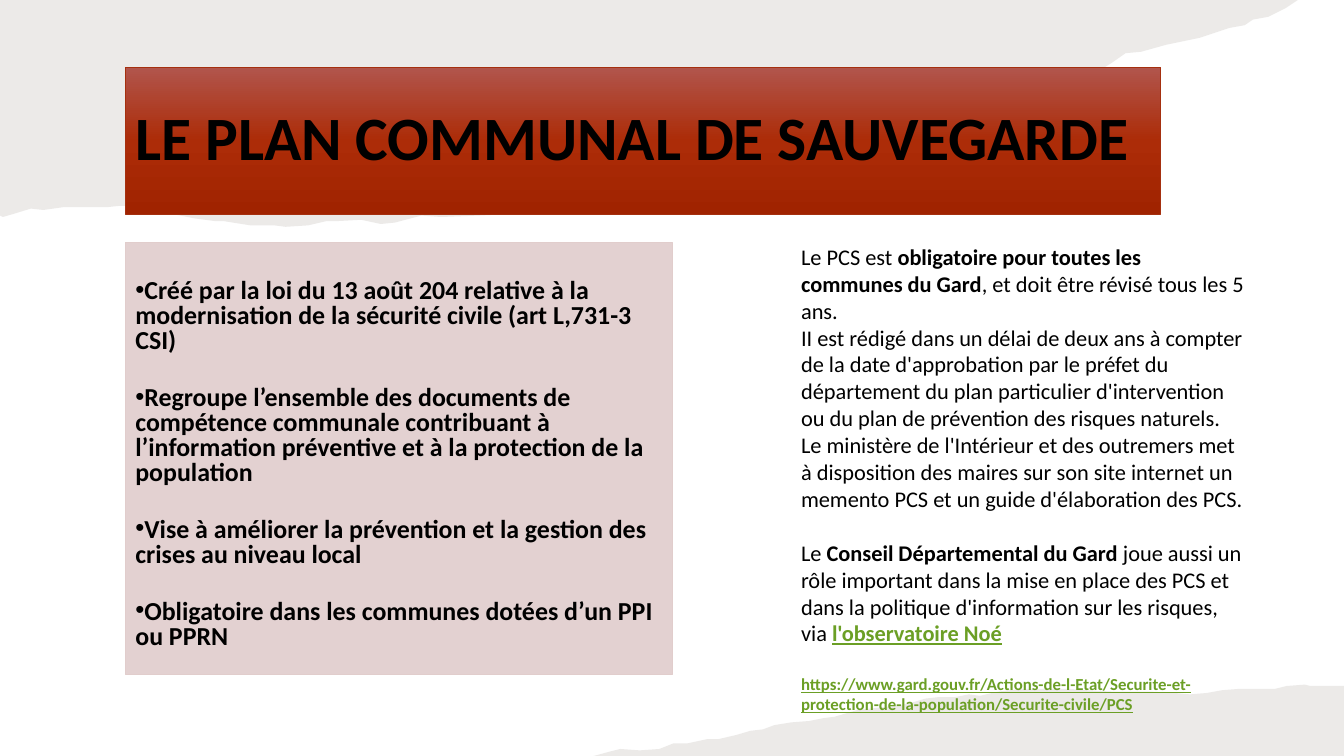
from copy import deepcopy
from dataclasses import dataclass

from lxml import etree
from pptx import Presentation
from pptx.dml.color import RGBColor
from pptx.enum import text as txt
from pptx.oxml.ns import qn
from pptx.util import Pt


@dataclass(frozen=True)
class Theme:
    font: str = "Calibri"
    ink: str = "000000"
    link: str = "6B9F25"
    paper: str = "82766A"
    panel: str = "E1CDCC"
    edge: str = "A5300F"
    band: tuple = ((0, "B1554C"), (0.5, "AC2C08"), (1, "A02300"))
    head: float = 44
    list: float = 18.5
    body: float = 16
    note: float = 12


class Deck:
    def __init__(self, theme):
        self.theme = theme
        self.prs = Presentation()
        self.prs.slide_width, self.prs.slide_height = Pt(960), Pt(540)
        self.slide = self.prs.slides.add_slide(self.prs.slide_layouts[3])

    def fade(self, shape, color, share):
        """Fill with a colour at the given opacity in percent."""
        shape.fill.solid()
        shape.fill.fore_color.rgb = RGBColor.from_string(color)
        tint = shape._element.spPr.find(qn("a:solidFill"))[0]
        etree.SubElement(tint, qn("a:alpha")).set("val", str(share * 1000))

    def edge(self, shape, color):
        shape.line.color.rgb = RGBColor.from_string(color)
        shape.line.width = Pt(0.5)

    def torn(self, points):
        """Draw a torn sheet of paper behind all the text."""
        pen = self.slide.shapes.build_freeform(*points[0], scale=Pt(1))
        pen.add_line_segments(points[1:], close=True)
        sheet = pen.convert_to_shape()
        sheet.shadow.inherit = False
        sheet.line.fill.background()
        self.fade(sheet, self.theme.paper, 15)
        self.slide.shapes._spTree.insert(2, sheet._element)

    def hold(self, idx, left, top, width, height):
        """Place a template placeholder."""
        box = self.slide.placeholders[idx]
        box.left, box.top = Pt(left), Pt(top)
        box.width, box.height = Pt(width), Pt(height)
        frame = box.text_frame
        frame.word_wrap = True
        frame.auto_size = txt.MSO_AUTO_SIZE.NONE
        return box

    def style(self, run, size, bold=False, link=False):
        font = run.font
        font.name, font.size, font.bold = self.theme.font, Pt(size), bold
        font.color.rgb = RGBColor.from_string(self.theme.link if link else self.theme.ink)
        if link:
            font.underline = True

    def space(self, para, line, before=0, after=0):
        para.alignment = txt.PP_ALIGN.LEFT
        para.line_spacing = line
        para.space_before, para.space_after = Pt(before), Pt(after)

    def mark(self, para, char=None):
        """Set the bullet flush with the text, or none."""
        props = para._p.get_or_add_pPr()
        props.set("marL", "0")
        props.set("indent", "0")
        if char:
            etree.SubElement(props, qn("a:buChar")).set("char", char)
        else:
            etree.SubElement(props, qn("a:buNone"))

    def title(self, words, *area):
        box = self.hold(0, *area)
        box.fill.gradient()
        box.fill.gradient_angle = 270
        stops = box._element.spPr.find(".//" + qn("a:gsLst"))
        stops.append(deepcopy(stops[-1]))
        for stop, (place, color) in zip(box.fill.gradient_stops, self.theme.band):
            stop.position = place
            stop.color.rgb = RGBColor.from_string(color)
        self.edge(box, self.theme.edge)
        box.text_frame.text = words
        box.text_frame.vertical_anchor = txt.MSO_ANCHOR.MIDDLE
        para = box.text_frame.paragraphs[0]
        self.space(para, 0.9)
        self.style(para.runs[0], self.theme.head, bold=True)

    def points(self, items, *area):
        box = self.hold(1, *area)
        self.fade(box, self.theme.panel, 90)
        self.edge(box, self.theme.panel)
        frame = box.text_frame
        frame.margin_top = Pt(27)
        frame.text = "\n".join(items)
        for para in frame.paragraphs:
            self.space(para, 0.8, after=23)
            self.mark(para, "•")
            self.style(para.runs[0], self.theme.list, bold=True)

    def prose(self, paras, *area):
        """Each paragraph is a gap, a size and runs of (words, bold, link)."""
        frame = self.hold(2, *area).text_frame
        for i, (gap, size, runs) in enumerate(paras):
            para = frame.add_paragraph() if i else frame.paragraphs[0]
            self.space(para, 1.0, before=gap)
            self.mark(para)
            for words, bold, link in runs:
                run = para.add_run()
                run.text = words
                self.style(run, size, bold, link)


TOP = [
    (0, 0), (927, 0), (918, 6), (906, 12), (895, 14), (889, 18), (878, 20),
    (857, 27), (833, 32), (815, 37), (804, 38), (794, 45), (781, 53), (774, 57),
    (757, 67), (743, 70), (732, 74), (721, 78), (712, 84), (699, 87), (684, 92),
    (670, 94), (660, 100), (644, 106), (638, 110), (623, 118), (616, 122),
    (604, 124), (592, 128), (576, 129), (565, 132), (552, 134), (535, 136),
    (520, 135), (504, 137), (475, 138), (426, 143), (393, 147), (376, 149),
    (362, 153), (342, 154), (315, 155), (301, 154), (282, 159), (272, 160),
    (258, 157), (240, 158), (233, 158), (220, 161), (204, 162), (196, 161),
    (179, 161), (160, 158), (154, 158), (139, 156), (124, 153), (117, 150),
    (106, 147), (86, 147), (76, 148), (45, 148), (31, 150), (22, 149),
    (9, 153), (2, 155), (0, 154),
]
BASE = [
    (960, 540), (424, 540), (435, 537), (443, 535), (457, 536), (471, 535),
    (481, 531), (491, 531), (505, 528), (513, 528), (526, 525), (536, 522),
    (545, 521), (553, 518), (565, 516), (578, 515), (588, 513), (596, 512),
    (613, 507), (623, 506), (641, 504), (651, 502), (661, 499), (670, 498),
    (682, 498), (692, 496), (700, 497), (713, 494), (731, 492), (763, 492),
    (775, 493), (795, 494), (822, 494), (839, 495), (850, 496), (862, 495),
    (873, 493), (886, 492), (911, 492), (919, 490), (932, 489), (936, 490),
    (960, 490),
]
DUTIES = [
    "Créé par la loi du 13 août 204 relative à la modernisation de la sécurité civile (art L,731-3 CSI)",
    "Regroupe l’ensemble des documents de compétence communale contribuant à l’information préventive et à la protection de la population",
    "Vise à améliorer la prévention et la gestion des crises au niveau local",
    "Obligatoire dans les communes dotées d’un PPI ou PPRN",
]


def main():
    theme = Theme()
    deck = Deck(theme)
    deck.torn(TOP)
    deck.torn(BASE)
    deck.title("LE PLAN COMMUNAL DE SAUVEGARDE", 89.5, 48, 739.5, 105)
    deck.points(DUTIES, 89.5, 173, 390.5, 308.5)
    gap = 19.5
    deck.prose([
        (0, theme.body, [
            ("Le PCS est ", False, False),
            ("obligatoire pour toutes les communes du Gard", True, False),
            (", et doit être révisé tous les 5 ans.", False, False)]),
        (0, theme.body, [("II est rédigé dans un délai de deux ans à compter de la date d'approbation par le préfet du département du plan particulier d'intervention ou du plan de prévention des risques naturels.", False, False)]),
        (0, theme.body, [("Le ministère de l'Intérieur et des outremers met à disposition des maires sur son site internet un memento PCS et un guide d'élaboration des PCS.", False, False)]),
        (gap, theme.body, [
            ("Le ", False, False),
            ("Conseil Départemental du Gard ", True, False),
            ("joue aussi un rôle important dans la mise en place des PCS et dans la politique d'information sur les risques, via ", False, False),
            ("l'observatoire Noé", True, True)]),
        (gap, theme.note, [("https://www.gard.gouv.fr/Actions-de-l-Etat/Securite-et-protection-de-la-population/Securite-civile/PCS", True, True)]),
    ], 565, 170, 331, 366)
    deck.prs.save("out.pptx")


if __name__ == "__main__":
    main()
